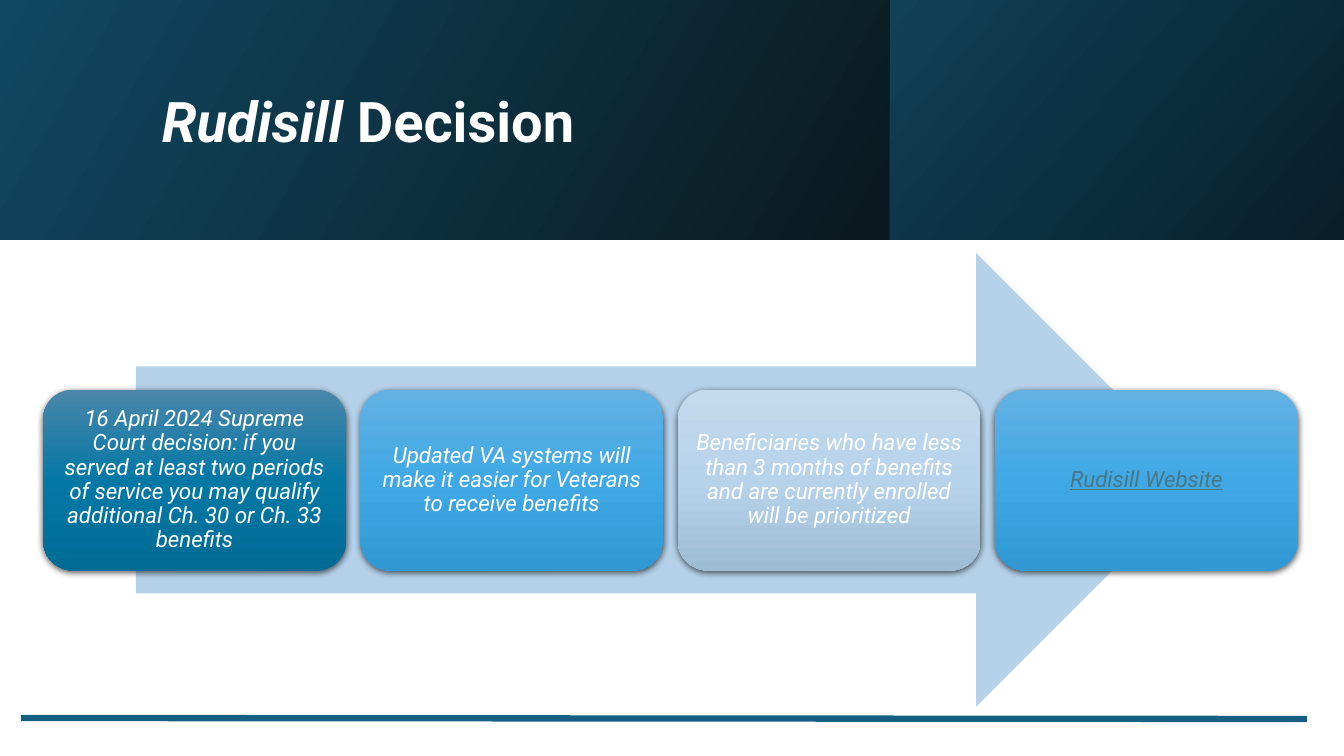
import pptx
import pptx.util
from pptx.dml.color import RGBColor
from pptx.enum.shapes import MSO_CONNECTOR, MSO_SHAPE
from pptx.enum.text import MSO_ANCHOR, PP_ALIGN
from pptx.oxml.ns import qn
from pptx.oxml.xmlchemy import OxmlElement

EMU_PER_PX = 914400 / 100.8
FONT = "Roboto"
COLORS = {
    "white": "FFFFFF",
    "link": "467886",
    "arrow": "B4D1E9",
    "rule": "156082",
    "shadow": "000000",
}
GRADIENTS = {
    "banner": [(0, "104862"), (68, "0B1A20"), (100, "0B1A20")],
    "panel": [(0, "114156"), (50, "0B3041"), (100, "0A1E2A")],
    "deep": [(0, "4B86AA"), (50, "0478A5"), (100, "006C96")],
    "bright": [(0, "63B1E3"), (50, "40A9E5"), (100, "3099D4")],
    "pale": [(0, "C3DAEC"), (50, "B6D3EB"), (100, "9EBCD4")],
}
CARDS = [
    ("16 April 2024 Supreme Court decision: if you served at least two periods of service "
     "you may qualify additional Ch. 30 or Ch. 33 benefits", "deep", "white"),
    ("Updated VA systems will make it easier for Veterans to receive benefits", "bright", "white"),
    ("Beneficiaries who have less than 3 months of benefits and are currently enrolled "
     "will be prioritized", "pale", "white"),
    ("Rudisill Website", "bright", "link"),
]


def px(length):
    return pptx.util.Emu(round(length * EMU_PER_PX))


def color(name):
    return RGBColor.from_string(COLORS[name])


def add_child(parent, tag, **attributes):
    child = OxmlElement(tag)
    for key, value in attributes.items():
        child.set(key, str(value))
    parent.append(child)
    return child


def add_plain_shape(slide, kind, box):
    shape = slide.shapes.add_shape(kind, *map(px, box))
    shape.line.fill.background()
    shape.shadow.inherit = False
    return shape


def fill_gradient(shape, name, clockwise_angle):
    shape.fill.gradient()
    shape.fill.gradient_angle = 360 - clockwise_angle
    stops = shape.element.spPr.find(qn("a:gradFill")).find(qn("a:gsLst"))
    for stop in list(stops):
        stops.remove(stop)
    for position, value in GRADIENTS[name]:
        stop = add_child(stops, "a:gs", pos=position * 1000)
        add_child(stop, "a:srgbClr", val=value)


def add_shadow(shape):
    effects = shape.element.spPr.find(qn("a:effectLst"))
    shadow = add_child(effects, "a:outerShdw", blurRad=pptx.util.Pt(4.5),
                       dist=pptx.util.Pt(1.5), dir=90 * 60000, algn="ctr", rotWithShape=0)
    tone = add_child(shadow, "a:srgbClr", val=COLORS["shadow"])
    add_child(tone, "a:alpha", val=63000)


def draw_banner(slide, box):
    left, top, width, height = box
    banner = add_plain_shape(slide, MSO_SHAPE.RECTANGLE, box)
    fill_gradient(banner, "banner", 30)
    panel_width = 454
    panel = add_plain_shape(slide, MSO_SHAPE.RECTANGLE,
                            (left + width - panel_width, top, panel_width, height))
    fill_gradient(panel, "panel", 40)

    title = slide.shapes.add_textbox(*map(px, (left + 152, top + 38, 1072, 173)))
    frame = title.text_frame
    frame.word_wrap = True
    frame.vertical_anchor = MSO_ANCHOR.MIDDLE
    paragraph = frame.paragraphs[0]
    paragraph.line_spacing = 0.9
    paragraph.font.name = FONT
    paragraph.font.size = pptx.util.Pt(40)
    paragraph.font.bold = True
    paragraph.font.color.rgb = color("white")
    for text, italic in (("Rudisill", True), (" Decision", False)):
        run = paragraph.add_run()
        run.text = text
        run.font.italic = italic


def draw_card(slide, box, text, gradient, text_color):
    card = add_plain_shape(slide, MSO_SHAPE.ROUNDED_RECTANGLE, box)
    fill_gradient(card, gradient, 90)
    add_shadow(card)
    frame = card.text_frame
    frame.word_wrap = True
    frame.vertical_anchor = MSO_ANCHOR.MIDDLE
    frame.margin_left = frame.margin_right = px(7)
    frame.margin_top = frame.margin_bottom = px(7)
    paragraph = frame.paragraphs[0]
    paragraph.text = text
    paragraph.alignment = PP_ALIGN.CENTER
    paragraph.line_spacing = 0.9
    paragraph.font.name = FONT
    paragraph.font.size = pptx.util.Pt(16)
    paragraph.font.italic = True
    paragraph.font.underline = text_color == "link"
    paragraph.font.color.rgb = color(text_color)


def draw_process(slide, box):
    left, top, width, height = box
    arrow = add_plain_shape(slide, MSO_SHAPE.RIGHT_ARROW, (left + 93, top, 1067, height))
    arrow.fill.solid()
    arrow.fill.fore_color.rgb = color("arrow")

    card_width, card_height = 303, 181
    pitch = (width - card_width) / (len(CARDS) - 1)
    card_top = top + (height - card_height) / 2
    for index, card in enumerate(CARDS):
        draw_card(slide, (left + index * pitch, card_top, card_width, card_height), *card)


def draw_footer_rule(slide, box):
    left, top, width, height = box
    rule = slide.shapes.add_connector(MSO_CONNECTOR.STRAIGHT, px(left), px(top),
                                      px(left + width), px(top + height))
    rule.line.color.rgb = color("rule")
    rule.line.width = pptx.util.Pt(4.5)
    add_child(rule.element.spPr, "a:effectLst")


def main():
    presentation = pptx.Presentation()
    presentation.slide_width = px(1344)
    presentation.slide_height = px(756)
    slide = presentation.slides.add_slide(presentation.slide_layouts[6])
    draw_banner(slide, (0, 0, 1344, 240))
    draw_process(slide, (43, 253, 1255, 454))
    draw_footer_rule(slide, (21, 718, 1286, 1))
    presentation.save("out.pptx")


if __name__ == "__main__":
    main()
